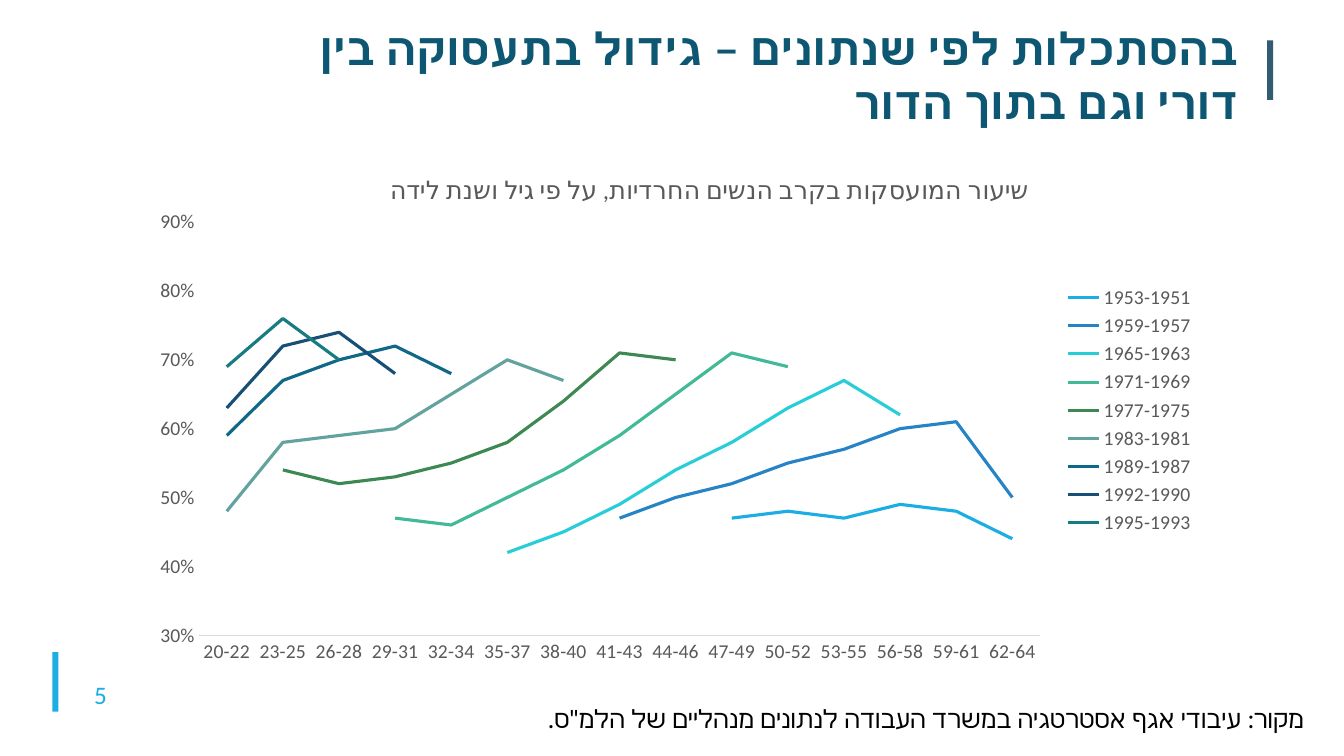
from dataclasses import dataclass

from lxml import etree
from pptx import Presentation
from pptx.chart.chart import Chart
from pptx.chart.data import CategoryChartData
from pptx.dml.color import RGBColor
from pptx.enum.chart import XL_CHART_TYPE, XL_LEGEND_POSITION, XL_TICK_MARK
from pptx.enum.shapes import MSO_SHAPE
from pptx.enum.text import PP_ALIGN
from pptx.oxml.ns import qn
from pptx.slide import Slide
from pptx.text.text import Font
from pptx.util import Emu, Inches, Pt

LINE_CHART = XL_CHART_TYPE.LINE
LEGEND_RIGHT = XL_LEGEND_POSITION.RIGHT
NO_TICK = XL_TICK_MARK.NONE
RECTANGLE = MSO_SHAPE.RECTANGLE
ALIGN_RIGHT = PP_ALIGN.RIGHT

# The grid has 160 columns and 90 rows of square cells.
CELL = Inches(1 / 12)
COLUMNS, ROWS = 160, 90

ACCENT = "1CADE4"
CHART_TEXT = "595959"
AXIS_LINE = "D9D9D9"


@dataclass(frozen=True)
class Area:
    """A place on the grid, in columns and rows."""
    column: float
    row: float
    columns: float
    rows: float

    def box(self) -> tuple[Emu, ...]:
        cells = (self.column, self.row, self.columns, self.rows)
        return tuple(Emu(round(count * CELL)) for count in cells)


@dataclass(frozen=True)
class Bar:
    area: Area
    color: str


@dataclass(frozen=True)
class Label:
    text: str
    area: Area
    size: int
    typeface: str
    color: str
    bold: bool = False


@dataclass(frozen=True)
class Cohort:
    """Women born in the same years; percentages start at age group `first`."""
    birth_years: str
    color: str
    first: int
    percentages: tuple[int, ...]


BARS = (
    Bar(Area(6.24, 77.64, 0.72, 7.08), ACCENT),
    Bar(Area(150.84, 4.8, 0.72, 7.08), "335B74"),
)
LABELS = (
    Label("בהסתכלות לפי שנתונים – גידול בתעסוקה בין דורי וגם בתוך הדור",
          Area(35.88, 1.92, 112.8, 14.16), 32, "Lato", "0E5772", bold=True),
    Label("5", Area(1.92, 80.28, 12, 4.8), 18, "Calibri", ACCENT),
    Label('מקור: עיבודי אגף אסטרטגיה במשרד העבודה לנתונים מנהליים של הלמ"ס.',
          Area(50.64, 83.16, 105.84, 4.8), 18, "Lato", "000000"),
)
CHART_AREA = Area(16.68, 17.4, 126.84, 62.88)
CHART_TITLE = "שיעור המועסקות בקרב הנשים החרדיות, על פי גיל ושנת לידה"
AGE_GROUPS = [f"{age}-{age + 2}" for age in range(20, 63, 3)]
COHORTS = (
    Cohort("1953-1951", "1CADE4", 9, (47, 48, 47, 49, 48, 44)),
    Cohort("1959-1957", "2683C6", 7, (47, 50, 52, 55, 57, 60, 61, 50)),
    Cohort("1965-1963", "27CED7", 5, (42, 45, 49, 54, 58, 63, 67, 62)),
    Cohort("1971-1969", "42BA97", 3, (47, 46, 50, 54, 59, 65, 71, 69)),
    Cohort("1977-1975", "3E8853", 1, (54, 52, 53, 55, 58, 64, 71, 70)),
    Cohort("1983-1981", "62A39F", 0, (48, 58, 59, 60, 65, 70, 67)),
    Cohort("1989-1987", "106889", 0, (59, 67, 70, 72, 68)),
    Cohort("1992-1990", "174F77", 0, (63, 72, 74, 68)),
    Cohort("1995-1993", "177C81", 0, (69, 76, 70)),
)


def rgb(color: str) -> RGBColor:
    return RGBColor.from_string(color)


def format_font(font: Font, size: int, typeface: str, color: str,
                bold: bool = False) -> None:
    font.size = Pt(size)
    font.name = typeface
    font.bold = bold
    font.color.rgb = rgb(color)


def write_text(text_frame, text: str, *, size: int, typeface: str, color: str,
               bold: bool = False) -> None:
    """Write one right-to-left paragraph."""
    paragraph = text_frame.paragraphs[0]
    paragraph.alignment = ALIGN_RIGHT
    paragraph._p.get_or_add_pPr().set("rtl", "1")
    run = paragraph.add_run()
    run.text = text
    format_font(run.font, size, typeface, color, bold)
    hebrew_font = etree.SubElement(run.font._element, qn("a:cs"))
    hebrew_font.set("typeface", typeface)


def add_bar(slide: Slide, bar: Bar) -> None:
    shape = slide.shapes.add_shape(RECTANGLE, *bar.area.box())
    shape.shadow.inherit = False
    shape.fill.solid()
    shape.fill.fore_color.rgb = rgb(bar.color)
    shape.line.fill.background()


def add_label(slide: Slide, label: Label) -> None:
    text_frame = slide.shapes.add_textbox(*label.area.box()).text_frame
    text_frame.word_wrap = True
    write_text(text_frame, label.text, size=label.size, typeface=label.typeface,
               color=label.color, bold=label.bold)


def place(element, **shares: float) -> None:
    """Fix a chart part at shares of the chart's width and height."""
    layout = element.find(qn("c:layout"))
    if layout is None:
        layout = etree.Element(qn("c:layout"))
        text = element.find(qn("c:tx"))
        element.insert(0 if text is None else 1, layout)
    manual = etree.SubElement(layout, qn("c:manualLayout"))
    settings = {"xMode": "edge", "yMode": "edge", **shares}
    if "w" in shares:
        settings = {"layoutTarget": "inner", **settings}
    for name, value in settings.items():
        etree.SubElement(manual, qn(f"c:{name}")).set("val", str(value))


def format_axes(chart: Chart) -> None:
    for axis in (chart.category_axis, chart.value_axis):
        axis.major_tick_mark = axis.minor_tick_mark = NO_TICK
        axis.has_major_gridlines = False
        format_font(axis.tick_labels.font, 14, "Calibri", CHART_TEXT)
    age_line = chart.category_axis.format.line
    age_line.color.rgb = rgb(AXIS_LINE)
    age_line.width = Pt(0.75)
    rates = chart.value_axis
    rates.minimum_scale, rates.maximum_scale, rates.major_unit = 0.3, 0.9, 0.1
    rates.tick_labels.number_format = "0%"
    rates.tick_labels.number_format_is_linked = False
    rates.format.line.fill.background()


def add_employment_chart(slide: Slide) -> None:
    data = CategoryChartData(number_format="0%")
    data.categories = AGE_GROUPS
    for cohort in COHORTS:
        rates = [percentage / 100 for percentage in cohort.percentages]
        data.add_series(cohort.birth_years, [None] * cohort.first + rates
                        + [None] * (len(AGE_GROUPS) - cohort.first - len(rates)))
    chart = slide.shapes.add_chart(LINE_CHART, *CHART_AREA.box(), data).chart
    format_font(chart.font, 14, "Calibri", "000000")
    format_axes(chart)

    plot = chart.plots[0]
    plot.vary_by_categories = False
    for series, cohort in zip(plot.series, COHORTS):
        series.smooth = False
        series.format.line.color.rgb = rgb(cohort.color)
        series.format.line.width = Pt(2.25)

    chart.has_legend = True
    chart.legend.position = LEGEND_RIGHT
    chart.legend.include_in_layout = False
    format_font(chart.legend.font, 14, "Calibri", CHART_TEXT)

    write_text(chart.chart_title.text_frame, CHART_TITLE, size=18,
               typeface="Calibri", color=CHART_TEXT)
    chart.chart_title.include_in_layout = False
    place(chart.chart_title._element, x=0.23, y=0.04)
    plot_area = chart._chartSpace.chart.plotArea
    place(plot_area, x=0.055, y=0.144, w=0.79, h=0.782)


def main() -> None:
    presentation = Presentation()
    presentation.slide_width = Emu(COLUMNS * CELL)
    presentation.slide_height = Emu(ROWS * CELL)
    slide = presentation.slides.add_slide(presentation.slide_layouts[6])
    for bar in BARS:
        add_bar(slide, bar)
    for label in LABELS:
        add_label(slide, label)
    add_employment_chart(slide)
    presentation.save("out.pptx")


if __name__ == "__main__":
    main()
